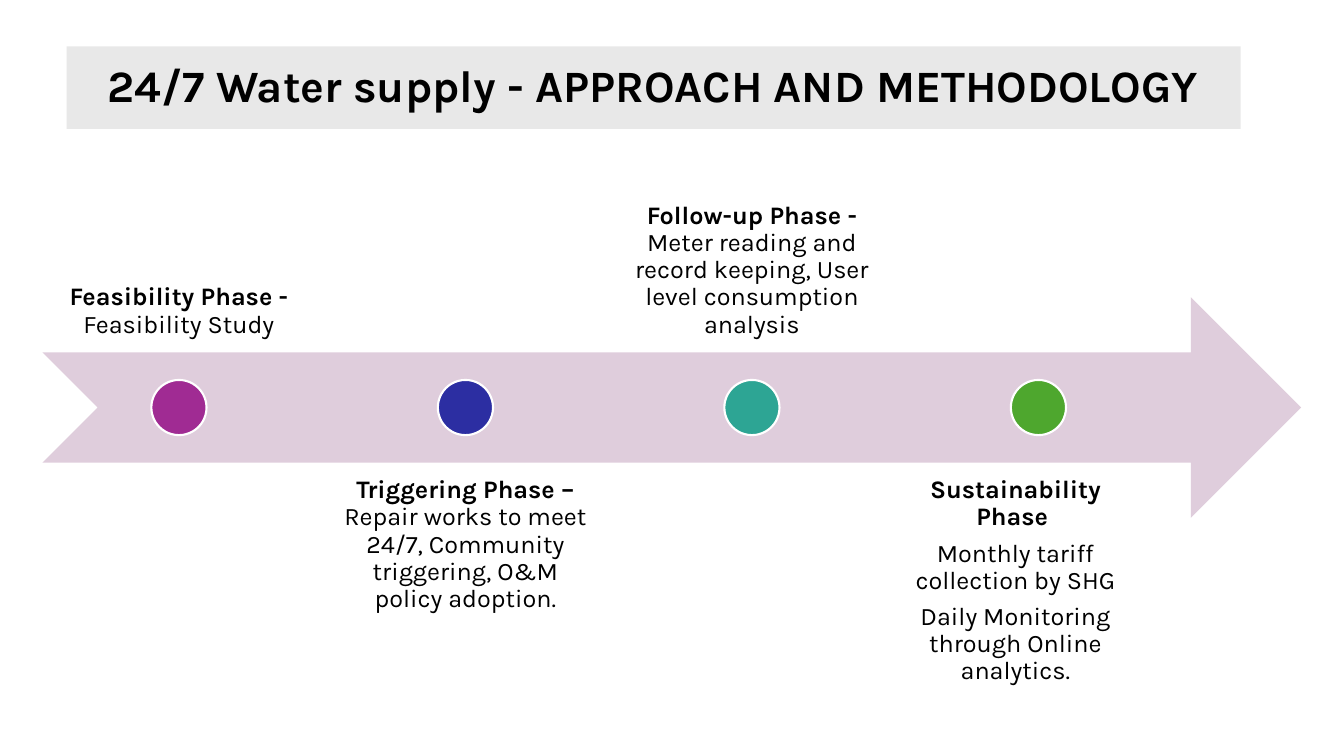
from dataclasses import dataclass

import pptx
import pptx.dml.color
import pptx.enum.shapes
import pptx.enum.text
import pptx.shapes.autoshape
import pptx.slide
import pptx.text.text
import pptx.util

Cm, Pt = pptx.util.Cm, pptx.util.Pt
Shape = pptx.enum.shapes.MSO_SHAPE
Anchor = pptx.enum.text.MSO_ANCHOR

FONT = "Karla"
COLORS = {
    "text": "000000", "title": "E8E8E8", "arrow": "DFCDDC", "outline": "FFFFFF",
    "purple": "A02B93", "blue": "2C2EA2", "teal": "2DA594", "green": "4EA72E",
}

# Lengths in centimetres
FIRST_CENTER, STEP = 4.51, 7.22
ARROW_TOP, BAND_HEIGHT = 7.49, 5.56
LABEL_WIDTH, LABEL_INSET = 6.88, 0.36
ABOVE_TOP, BELOW_TOP = 3.33, 11.66
DOT_SIZE = 1.39


@dataclass
class Phase:
    color: str
    paragraphs: list[list[tuple[str, bool]]]  # runs of (text, bold)
    label_shift: float = 0


PHASES = [
    Phase("purple", [[("Feasibility Phase - ", True), ("Feasibility Study", False)]]),
    Phase("blue", [[("Triggering Phase – ", True),
                    ("Repair works to meet 24/7, Community triggering, "
                     "O&M policy adoption.", False)]]),
    Phase("teal", [[("Follow-up Phase - ", True),
                    ("Meter reading and record keeping, "
                     "User level consumption analysis", False)]]),
    Phase("green", [[("Sustainability Phase ", True)],
                    [("Monthly tariff collection by SHG", False)],
                    [("Daily Monitoring through Online analytics.", False)]],
          label_shift=-0.58),
]


def rgb(name: str) -> pptx.dml.color.RGBColor:
    return pptx.dml.color.RGBColor.from_string(COLORS[name])


def add_filled(s: pptx.slide.Slide, kind: Shape, left: float, top: float,
               width: float, height: float, color: str) -> pptx.shapes.autoshape.Shape:
    sp = s.shapes.add_shape(kind, Cm(left), Cm(top), Cm(width), Cm(height))
    sp.shadow.inherit = False
    sp.fill.solid()
    sp.fill.fore_color.rgb = rgb(color)
    sp.line.fill.background()
    return sp


def style_paragraph(p: pptx.text.text._Paragraph, size: float) -> None:
    p.alignment = pptx.enum.text.PP_ALIGN.CENTER
    p.line_spacing = 0.9
    p.font.name = FONT
    p.font.size = Pt(size)
    p.font.color.rgb = rgb("text")


def add_title(s: pptx.slide.Slide) -> None:
    sp = add_filled(s, Shape.RECTANGLE, 1.68, 1.17, 29.59, 2.08, "title")
    tf = sp.text_frame
    tf.word_wrap = True
    tf.vertical_anchor = Anchor.MIDDLE
    p = tf.paragraphs[0]
    p.text = "24/7 Water supply - APPROACH AND METHODOLOGY"
    style_paragraph(p, 32)
    p.font.bold = True


def add_label(s: pptx.slide.Slide, phase: Phase, center: float, above: bool) -> None:
    left = center - LABEL_WIDTH / 2 + phase.label_shift
    top = ABOVE_TOP if above else BELOW_TOP
    tf = s.shapes.add_textbox(Cm(left), Cm(top), Cm(LABEL_WIDTH), Cm(BAND_HEIGHT)).text_frame
    tf.word_wrap = True
    tf.vertical_anchor = Anchor.BOTTOM if above else Anchor.TOP
    tf.margin_left = tf.margin_right = tf.margin_top = tf.margin_bottom = Cm(LABEL_INSET)
    for i, runs in enumerate(phase.paragraphs):
        p = tf.add_paragraph() if i else tf.paragraphs[0]
        style_paragraph(p, 18)
        p.space_after = Pt(6.3)
        for text, bold in runs:
            r = p.add_run()
            r.text = text
            r.font.bold = bold


def add_dot(s: pptx.slide.Slide, phase: Phase, center: float) -> None:
    top = ARROW_TOP + (BAND_HEIGHT - DOT_SIZE) / 2
    sp = add_filled(s, Shape.OVAL, center - DOT_SIZE / 2, top, DOT_SIZE, DOT_SIZE, phase.color)
    sp.line.color.rgb = rgb("outline")
    sp.line.width = Pt(1.5)


def main() -> None:
    prs = pptx.Presentation()
    prs.slide_width, prs.slide_height = Cm(33.87), Cm(19.05)
    s = prs.slides.add_slide(prs.slide_layouts[6])
    add_title(s)
    add_filled(s, Shape.NOTCHED_RIGHT_ARROW, 1.07, ARROW_TOP, 31.72, BAND_HEIGHT, "arrow")
    for i, phase in enumerate(PHASES):
        center = FIRST_CENTER + i * STEP
        add_label(s, phase, center, above=i % 2 == 0)
        add_dot(s, phase, center)
    prs.save("out.pptx")


if __name__ == "__main__":
    main()
